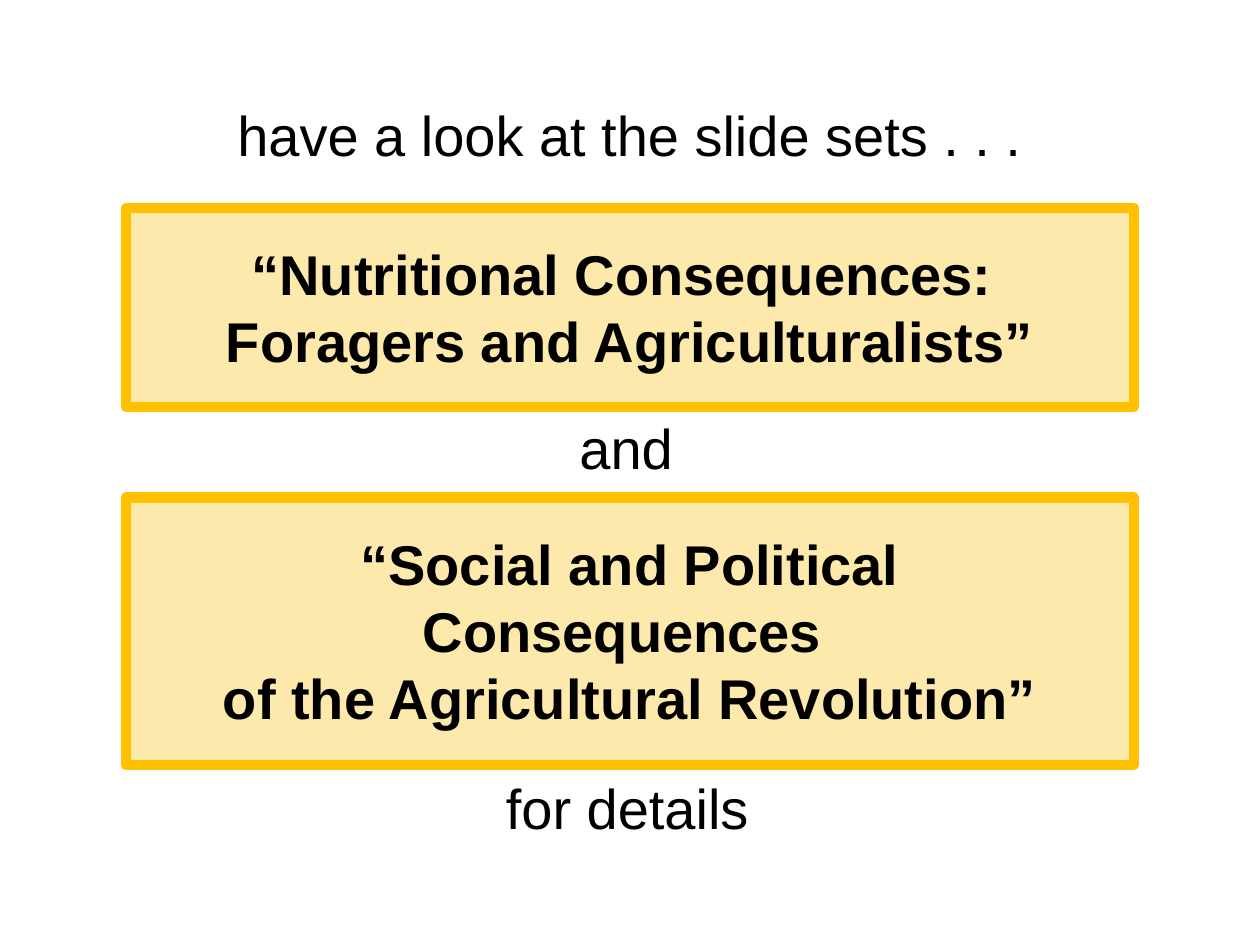
from pptx import Presentation
from pptx.dml.color import RGBColor
from pptx.enum import shapes, text
from pptx.util import Inches, Pt


def colour(hex_value):
    return RGBColor.from_string(hex_value)


def write(shape, lines, bold=False, inset=None, wrap=True, align=text.PP_ALIGN.CENTER):
    frame = shape.text_frame
    frame.word_wrap = wrap
    frame.auto_size = text.MSO_AUTO_SIZE.SHAPE_TO_FIT_TEXT
    frame.vertical_anchor = text.MSO_ANCHOR.TOP
    if inset is not None:
        frame.margin_left = frame.margin_right = Inches(inset)
        frame.margin_top = frame.margin_bottom = Inches(inset)
    for number, line in enumerate(lines):
        paragraph = frame.add_paragraph() if number else frame.paragraphs[0]
        paragraph.alignment = align
        run = paragraph.add_run()
        run.text = line
        run.font.name = "Arial"
        run.font.size = Pt(32)
        run.font.bold = bold
        run.font.color.rgb = colour("000000")


deck = Presentation()
deck.slide_width, deck.slide_height = Inches(10), Inches(7.5)
slide = deck.slides.add_slide(deck.slide_layouts[6])

# Framed names of the two slide sets
slide_sets = [
    (1.65, 1.58, ["“Nutritional Consequences: ", "Foragers and Agriculturalists”"]),
    (3.95, 2.12, ["“Social and Political Consequences ", "of the Agricultural Revolution”"]),
]
for top, height, lines in slide_sets:
    frame_box = slide.shapes.add_shape(
        shapes.MSO_SHAPE.RECTANGLE, Inches(1), Inches(top), Inches(8), Inches(height))
    frame_box.shadow.inherit = False
    frame_box.fill.solid()
    frame_box.fill.fore_color.rgb = colour("FEE9AC")
    frame_box.line.color.rgb = colour("FFC000")
    frame_box.line.width = Pt(6)
    write(frame_box, lines, bold=True, inset=0.25)

# Linking words above, between and below the frames
linking_words = [
    (0.6, 0.75, 8.8, "have a look at the slide sets . . .", {}),
    (0.58, 6.09, 8.8, "for details", {}),
    (4.5, 3.23, 0.95, "and", {"wrap": False, "align": text.PP_ALIGN.LEFT}),
]
for left, top, width, words, layout in linking_words:
    caption = slide.shapes.add_textbox(Inches(left), Inches(top), Inches(width), Inches(0.64))
    write(caption, [words], **layout)

deck.save("out.pptx")
